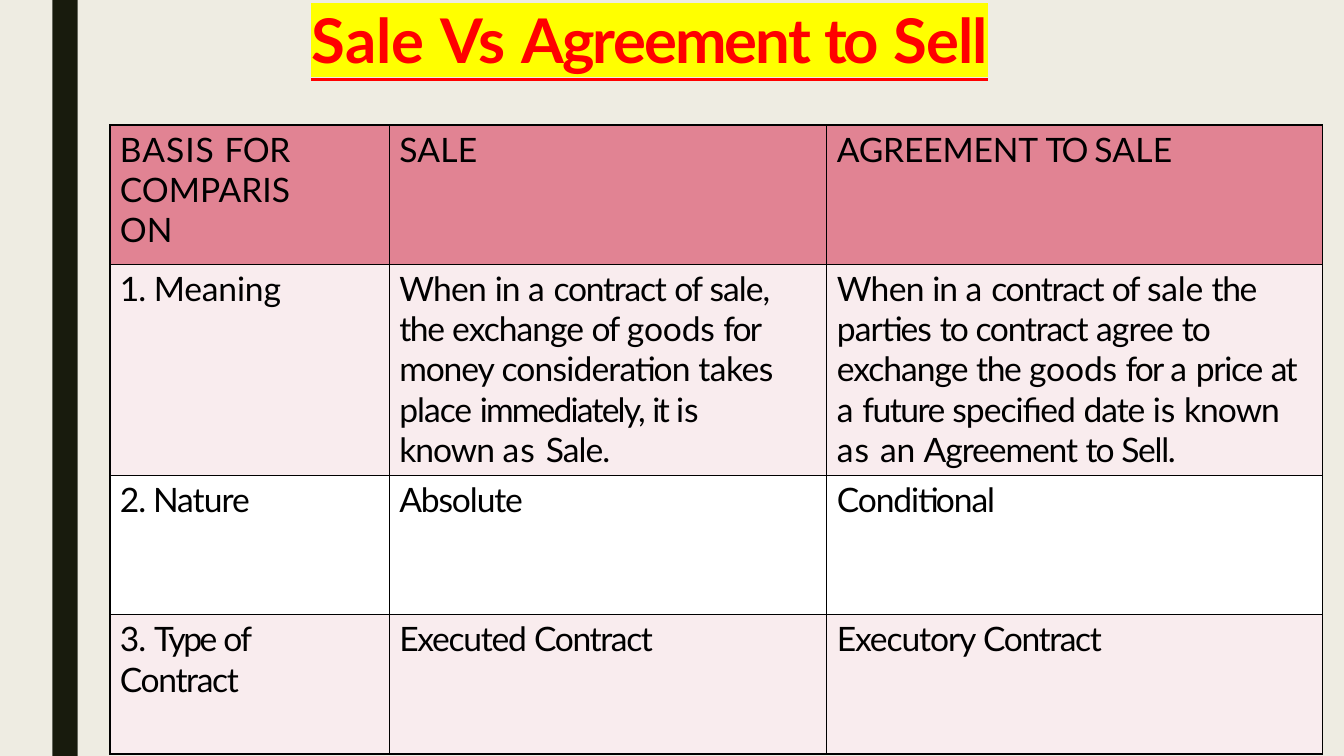
import pptx
import pptx.dml.color
import pptx.enum.shapes
import pptx.enum.text
import pptx.oxml
import pptx.oxml.ns
import pptx.util
import lxml.etree

Inches = pptx.util.Inches
Pt = pptx.util.Pt

FONT = "Lato"
CREAM, OLIVE, BLACK = "EEECE2", "181B0D", "000000"
ROSE, BLUSH, WHITE = "E18393", "F9ECEE", "FFFFFF"

TITLE_RUNS = [("Sale ", 0.1), ("Vs ", 0.2), ("Agreement ", -1.4),
              ("to", -2.6), (" ", -9.6), ("Sell", -0.7)]

COMPARISON = [
    ("BASIS FOR COMPARISON", "SALE", "AGREEMENT TO SALE"),
    ("1. Meaning",
     "When in a contract of sale, the exchange of goods for money "
     "consideration takes place immediately, it is known as Sale.",
     "When in a contract of sale the parties to contract agree to exchange "
     "the goods for a price at a future specified date is known as an "
     "Agreement to Sell."),
    ("2. Nature", "Absolute", "Conditional"),
    ("3. Type of Contract", "Executed Contract", "Executory Contract"),
]
COLUMN_WIDTHS = [2.77, 4.34, 4.92]
RIGHT_MARGINS = [0.8, 0.4, 0.15]
ROW_HEIGHTS = [1.38, 2.1, 1.38, 1.38]
ROW_FILLS = [ROSE, BLUSH, WHITE, BLUSH]

WORD_SPACING = {
    "BASIS": 0.7, "FOR": -0.3, "COMPARISON": 0, "SALE": 0.2,
    "AGREEMENT": -0.1, "TO": -2, "1.": -0.8, "Meaning": -0.1,
    "When": -0.5, "in": -0.8, "a": 0.1, "contract": -0.9, "of": -1.1,
    "sale,": -0.7, "sale": -0.2, "the": -1, "exchange": -0.7,
    "goods": -0.1, "for": -1.4, "money": -0.8, "consideration": -0.6,
    "takes": -0.4, "place": -0.7, "immediately,": -1.3, "it": -1.8,
    "is": 0, "known": -0.7, "as": 0.8, "Sale.": -0.7, "parties": -0.6,
    "to": -1.4, "agree": -0.6, "price": -0.9, "at": -1.1,
    "future": -1.1, "specified": -0.7, "date": -0.8, "an": -0.1,
    "Agreement": -0.8, "Sell.": -0.9, "2.": -0.7, "Nature": -0.7,
    "Absolute": -0.8, "Conditional": -0.8, "3.": -0.7, "Type": -1.8,
    "Contract": -1, "Executed": -0.9, "Executory": -0.8,
}


def rgb(code):
    return pptx.dml.color.RGBColor.from_string(code)


def add_spaced_run(paragraph, wording, spacing, size, color):
    run = paragraph.add_run()
    run.text = wording
    run.font.name = FONT
    run.font.size = Pt(size)
    run.font.color.rgb = rgb(color)
    run.font.bold = False
    properties = run.font._element
    properties.set("spc", str(round(spacing * 100)))
    return run


def add_band(slide, left, width, color):
    band = slide.shapes.add_shape(
        pptx.enum.shapes.MSO_SHAPE.RECTANGLE,
        Inches(left), 0, Inches(width), Inches(7.5))
    band.shadow.inherit = False
    band.fill.solid()
    band.fill.fore_color.rgb = rgb(color)
    band.line.fill.background()


def add_backdrop(slide, bar_left, bar_width, slide_width):
    bar_right = bar_left + bar_width
    add_band(slide, bar_right, slide_width - bar_right, CREAM)
    add_band(slide, 0, bar_left, CREAM)
    add_band(slide, bar_left, bar_width, OLIVE)


def highlight(run, color):
    mark = pptx.oxml.parse_xml(
        f'<a:highlight {pptx.oxml.ns.nsdecls("a")}>'
        f'<a:srgbClr val="{color}"/></a:highlight>')
    run.font._element.find(pptx.oxml.ns.qn("a:solidFill")).addnext(mark)


def add_title(slide, left, top, width, height):
    title = slide.shapes.add_textbox(
        Inches(left), Inches(top), Inches(width), Inches(height))
    frame = title.text_frame
    frame.word_wrap = True
    frame.margin_left = Inches(0.01)
    frame.margin_top = Inches(0.01)
    frame.margin_right = frame.margin_bottom = 0
    heading = frame.paragraphs[0]
    heading.space_before = Pt(1)
    for wording, spacing in TITLE_RUNS:
        run = add_spaced_run(heading, wording, spacing, 44, "FF0000")
        run.font.bold = True
        run.font.underline = True
        highlight(run, "FFFF00")


def add_borders(cell):
    properties = cell._tc.get_or_add_tcPr()
    for position, side in enumerate(("lnL", "lnR", "lnT", "lnB")):
        border = lxml.etree.Element(
            pptx.oxml.ns.qn(f"a:{side}"), w=str(Pt(1)))
        fill = lxml.etree.SubElement(border, pptx.oxml.ns.qn("a:solidFill"))
        lxml.etree.SubElement(fill, pptx.oxml.ns.qn("a:srgbClr"), val=BLACK)
        properties.insert(position, border)


def fill_cell(cell, wording, color, right_margin):
    cell.fill.solid()
    cell.fill.fore_color.rgb = rgb(color)
    cell.vertical_anchor = pptx.enum.text.MSO_ANCHOR.TOP
    cell.margin_left = Inches(0.1)
    cell.margin_top = Inches(0.04)
    cell.margin_right = Inches(right_margin)
    cell.margin_bottom = 0
    paragraph = cell.text_frame.paragraphs[0]
    paragraph.space_before = Pt(3)
    words = wording.split()
    for number, word in enumerate(words, 1):
        gap = " " if number < len(words) else ""
        add_spaced_run(paragraph, word + gap, WORD_SPACING[word], 24, BLACK)
    add_borders(cell)


def add_comparison(slide, left, top):
    table = slide.shapes.add_table(
        len(ROW_HEIGHTS), len(COLUMN_WIDTHS), Inches(left), Inches(top),
        Inches(sum(COLUMN_WIDTHS)), Inches(sum(ROW_HEIGHTS))).table
    table.first_row = False
    table.horz_banding = False
    for column, width in zip(table.columns, COLUMN_WIDTHS):
        column.width = Inches(width)
    for row, height, entries, color in zip(
            table.rows, ROW_HEIGHTS, COMPARISON, ROW_FILLS):
        row.height = Inches(height)
        for cell, wording, margin in zip(row.cells, entries, RIGHT_MARGINS):
            fill_cell(cell, wording, color, margin)


def main():
    deck = pptx.Presentation()
    deck.slide_width = Inches(13.33)
    deck.slide_height = Inches(7.5)
    slide = deck.slides.add_slide(deck.slide_layouts[6])
    add_backdrop(slide, 0.52, 0.25, 13.33)
    add_title(slide, 3.08, 0.01, 7.03, 0.75)
    add_comparison(slide, 1.09, 1.24)
    deck.save("out.pptx")


if __name__ == "__main__":
    main()
